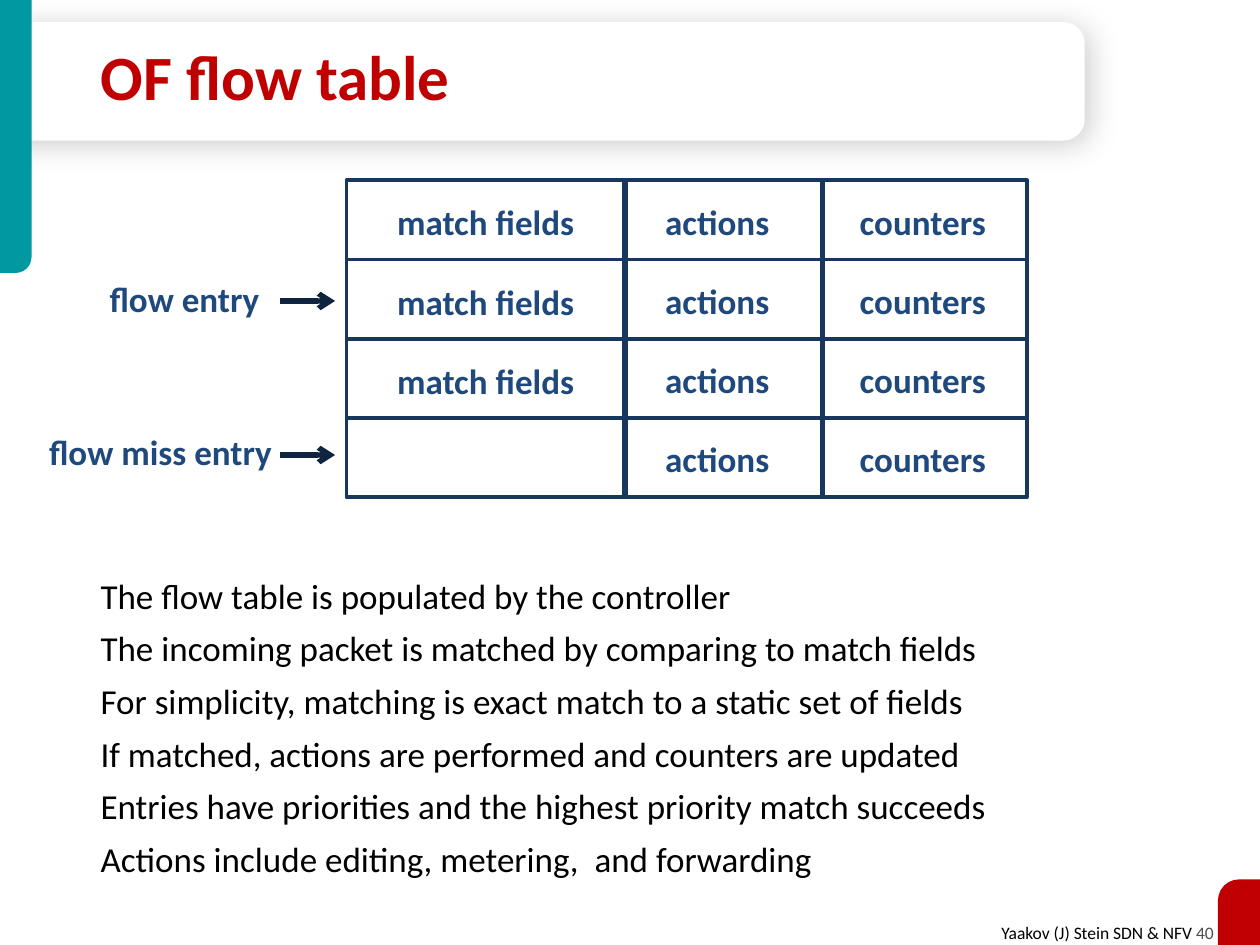
from dataclasses import dataclass
from typing import Optional

from lxml.etree import SubElement
from pptx import Presentation
from pptx.dml.color import RGBColor
from pptx.enum.shapes import MSO_CONNECTOR as Connector, MSO_SHAPE as Preset
from pptx.enum.text import MSO_ANCHOR as Anchor, MSO_AUTO_SIZE as AutoSize, PP_ALIGN as Align
from pptx.oxml.ns import qn
from pptx.util import Pt


@dataclass(frozen=True)
class Theme:
    font: str = "Calibri"
    red: str = "C00000"
    teal: str = "0098A1"
    white: str = "FFFFFF"
    black: str = "000000"
    grey: str = "4D4D4D"
    label: str = "1F497D"
    grid: str = "17375E"
    arrow: str = "0F243E"
    title_size: float = 36
    text_size: float = 20
    footer_size: float = 10


@dataclass(frozen=True)
class Box:
    left: float
    top: float
    width: float
    height: float

    def lengths(self) -> tuple:
        return Pt(self.left), Pt(self.top), Pt(self.width), Pt(self.height)


@dataclass(frozen=True)
class Column:
    label: str
    left: float
    width: float
    drop: float


@dataclass(frozen=True)
class Pointer:
    label: str
    left: float
    top: float
    arrow_y: float


THEME = Theme()
TABLE = Box(198, 103, 388.8, 45.3)
ROW_COUNT = 4
DIVIDERS = (357.1, 470.2)
LABEL_HEIGHT = 28
COLUMNS = (
    Column("match fields", 204.5, 146, 12),
    Column("actions", 355.9, 108, 11.5),
    Column("counters", 483.8, 87, 11.5),
)
POINTERS = (
    Pointer("flow entry", 32.4, 159, 172),
    Pointer("flow miss entry", 18.7, 246.2, 260),
)
STATEMENTS = (
    "The flow table is populated by the controller",
    "The incoming packet is matched by comparing to match fields",
    "For simplicity, matching is exact match to a static set of fields",
    "If matched, actions are performed and counters are updated",
    "Entries have priorities and the highest priority match succeeds",
    "Actions include editing, metering,  and forwarding",
)


def add_run(paragraph, text: str, *, size: float, color: str, bold: bool = False) -> None:
    run = paragraph.add_run()
    run.text = text
    run.font.name = THEME.font
    run.font.size = Pt(size)
    run.font.bold = bold
    run.font.color.rgb = RGBColor.from_string(color)


def add_text(slide, box: Box, *lines: str, size: float = THEME.text_size,
             color: str = THEME.label, bold: bool = False, align: Align = Align.LEFT,
             spacing: Optional[float] = None, before: float = 0,
             wrap: bool = True, grow: bool = False):
    frame = slide.shapes.add_textbox(*box.lengths()).text_frame
    frame.word_wrap = wrap
    frame.auto_size = AutoSize.SHAPE_TO_FIT_TEXT if grow else AutoSize.NONE
    for index, line in enumerate(lines):
        paragraph = frame.add_paragraph() if index else frame.paragraphs[0]
        paragraph.alignment = align
        paragraph.line_spacing = spacing
        paragraph.space_before = Pt(before)
        add_run(paragraph, line, size=size, color=color, bold=bold)
    return frame


def add_label(slide, text: str, left: float, top: float, width: float) -> None:
    add_text(slide, Box(left, top, width, LABEL_HEIGHT), text, bold=True,
             align=Align.CENTER, spacing=0.85, grow=True)


def add_block(slide, preset: Preset, box: Box, *, fill: Optional[str] = None,
              adjustments: tuple = (), flip: str = ""):
    block = slide.shapes.add_shape(preset, *box.lengths())
    block.shadow.inherit = False
    for index, value in enumerate(adjustments):
        block.adjustments[index] = value
    if fill:
        block.fill.solid()
        block.fill.fore_color.rgb = RGBColor.from_string(fill)
    else:
        block.fill.background()
    block.line.fill.background()
    if flip:
        block.element.spPr.find(qn("a:xfrm")).set(flip, "1")
    return block


def add_line(slide, start: tuple, end: tuple, color: str, arrow: bool = False) -> None:
    line = slide.shapes.add_connector(Connector.STRAIGHT, *map(Pt, start + end))
    line.line.color.rgb = RGBColor.from_string(color)
    line.line.width = Pt(3)
    properties = line.element.spPr
    if arrow:
        SubElement(properties.find(qn("a:ln")), qn("a:tailEnd"), type="arrow")
    SubElement(properties, qn("a:effectLst"))


def add_soft_shadow(block) -> None:
    effects = block.element.spPr.find(qn("a:effectLst"))
    shadow = SubElement(effects, qn("a:outerShdw"), blurRad=str(Pt(17)), dist=str(Pt(3)),
                        dir=str(45 * 60000), algn="ctr", rotWithShape="0")
    color = SubElement(shadow, qn("a:srgbClr"), val=THEME.black)
    SubElement(color, qn("a:alpha"), val="19000")


def draw_frame(slide) -> None:
    footer = add_text(slide, Box(560.2, 523.4, 140.4, 19.4), "Yaakov (J) Stein SDN & NFV ",
                      size=THEME.footer_size, color=THEME.black, align=Align.RIGHT,
                      wrap=False, grow=True)
    add_run(footer.paragraphs[0], "40", size=THEME.footer_size, color=THEME.grey)
    banner = add_block(slide, Preset.ROUND_2_SAME_RECTANGLE, Box(276, -263.5, 67.7, 620),
                       fill=THEME.white, adjustments=(0.18, 0))
    banner.rotation = 90
    add_soft_shadow(banner)
    add_block(slide, Preset.ROUND_1_RECTANGLE, Box(0, 0, 18, 156),
              fill=THEME.teal, adjustments=(0.5,), flip="flipV")
    add_block(slide, Preset.ROUND_1_RECTANGLE, Box(696, 502.5, 24, 37.5),
              fill=THEME.red, adjustments=(0.5,), flip="flipH")


def draw_title(slide, text: str) -> None:
    title = slide.shapes.title
    title.element.getparent().append(title.element)
    title.left, title.top, title.width, title.height = Box(50.4, 21, 532.8, 51).lengths()
    frame = title.text_frame
    frame.auto_size = AutoSize.NONE
    frame.vertical_anchor = Anchor.MIDDLE
    heading = frame.paragraphs[0]
    heading.alignment = Align.LEFT
    heading.line_spacing = 0.85
    add_run(heading, text, size=THEME.title_size, color=THEME.red, bold=True)


def draw_flow_table(slide) -> None:
    for row in range(ROW_COUNT):
        top = TABLE.top + row * TABLE.height
        entry = add_block(slide, Preset.RECTANGLE,
                          Box(TABLE.left, top, TABLE.width, TABLE.height))
        entry.line.color.rgb = RGBColor.from_string(THEME.grid)
        entry.line.width = Pt(2)
        for x in DIVIDERS:
            add_line(slide, (x, top - 0.5), (x, top + TABLE.height - 0.5), THEME.grid)
        is_miss_entry = row == ROW_COUNT - 1
        for column in COLUMNS[1:] if is_miss_entry else COLUMNS:
            add_label(slide, column.label, column.left, top + column.drop, column.width)


def main() -> None:
    deck = Presentation()
    deck.slide_width, deck.slide_height = Pt(720), Pt(540)
    slide = deck.slides.add_slide(deck.slide_layouts[5])
    draw_frame(slide)
    draw_title(slide, "OF flow table")
    add_text(slide, Box(50.4, 324.7, 601, 186), *STATEMENTS, color=THEME.black, before=6)
    draw_flow_table(slide)
    for pointer in POINTERS:
        add_label(slide, pointer.label, pointer.left, pointer.top, 146)
        add_line(slide, (160, pointer.arrow_y), (191.5, pointer.arrow_y), THEME.arrow, arrow=True)
    deck.save("out.pptx")


if __name__ == "__main__":
    main()
